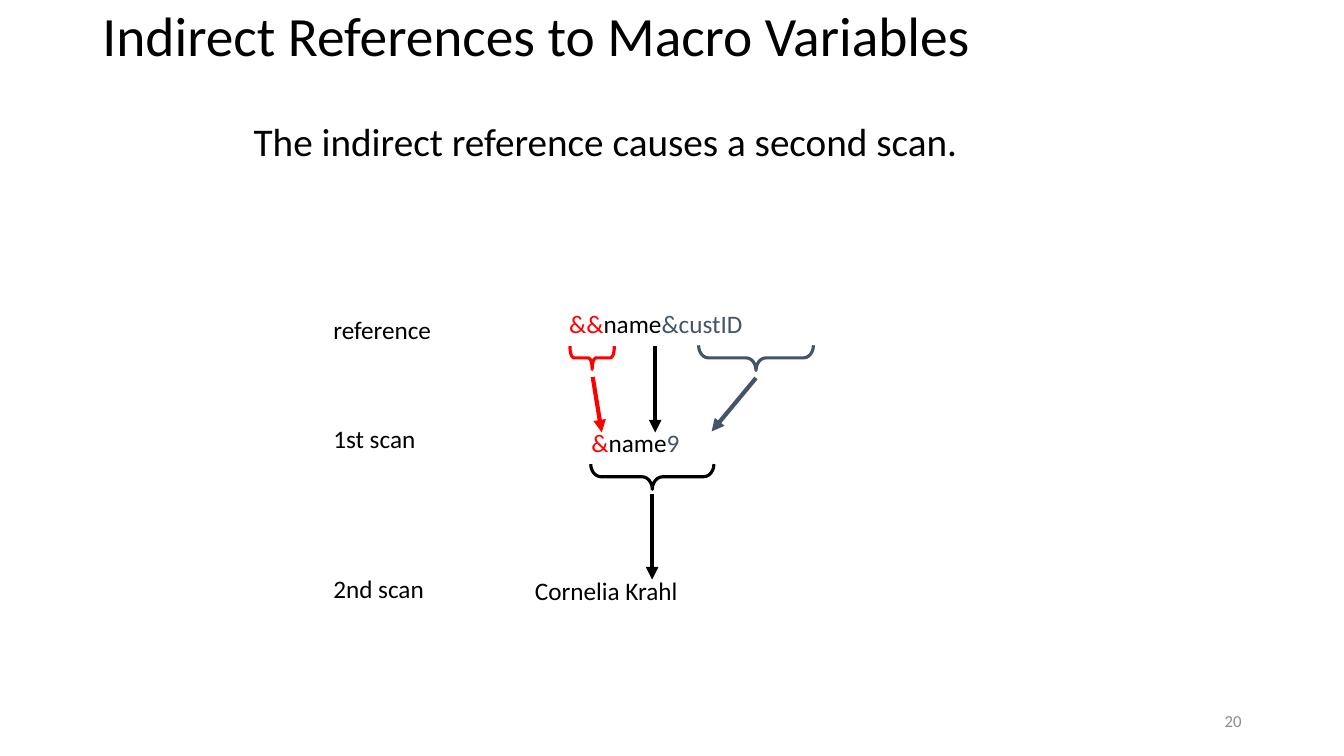
from dataclasses import dataclass

from lxml.etree import SubElement
from pptx import Presentation
from pptx.dml.color import RGBColor
from pptx.enum.shapes import MSO_CONNECTOR as Connector, MSO_SHAPE as Shape
from pptx.enum.text import MSO_ANCHOR as Anchor, MSO_AUTO_SIZE as AutoSize, PP_ALIGN as Align
from pptx.oxml.ns import qn
from pptx.util import Pt


@dataclass(frozen=True)
class Theme:
    font: str = "Calibri"
    ink: str = "000000"
    escape: str = "FF0000"
    index: str = "44546A"
    muted: str = "8C8C8C"
    title: float = 39.6
    body: float = 28
    label: float = 18
    footer: float = 12
    brace_line: float = 2.25
    arrow_line: float = 3


THEME = Theme()


def write(frame, text, size=THEME.label, color=THEME.ink, align=Align.LEFT, anchor=Anchor.TOP,
          wrap=True, fit=AutoSize.NONE, inset=None, spacing=None):
    frame.word_wrap = wrap
    frame.auto_size = fit
    frame.vertical_anchor = anchor
    if inset is not None:
        frame.margin_left = frame.margin_right = Pt(inset)
        frame.margin_top = frame.margin_bottom = Pt(inset)
    paragraph = frame.paragraphs[0]
    paragraph.alignment = align
    paragraph.space_before = Pt(0)
    paragraph.line_spacing = spacing
    parts = [(text, color)] if isinstance(text, str) else text
    for words, part_color in parts:
        run = paragraph.add_run()
        run.text = words
        run.font.name = THEME.font
        run.font.size = Pt(size)
        run.font.color.rgb = RGBColor.from_string(part_color)
    return paragraph


def place(placeholder, left, top, width, height):
    placeholder.left, placeholder.top = Pt(left), Pt(top)
    placeholder.width, placeholder.height = Pt(width), Pt(height)
    return placeholder.text_frame


def add_text(slide, box, text, **style):
    write(slide.shapes.add_textbox(*map(Pt, box)).text_frame, text, **style)


def add_label(slide, box, text, **style):
    add_text(slide, box, text, fit=AutoSize.SHAPE_TO_FIT_TEXT, **style)


def stroke(line, color, width):
    line.color.rgb = RGBColor.from_string(color)
    line.width = Pt(width)


def add_brace(slide, center, middle, span, depth, curve, color):
    brace = slide.shapes.add_shape(Shape.LEFT_BRACE, Pt(center - depth / 2), Pt(middle - span / 2),
                                   Pt(depth), Pt(span))
    brace.rotation = 270
    brace.adjustments[0] = curve
    brace.shadow.inherit = False
    brace.fill.background()
    stroke(brace.line, color, THEME.brace_line)


def add_arrow(slide, start, end, color):
    arrow = slide.shapes.add_connector(Connector.STRAIGHT, *map(Pt, start + end))
    stroke(arrow.line, color, THEME.arrow_line)
    properties = arrow.element.spPr
    SubElement(properties.find(qn("a:ln")), qn("a:tailEnd"), type="triangle")
    SubElement(properties, qn("a:effectLst"))


def add_headings(slide):
    title, body = slide.placeholders
    write(place(title, 66, 1.5, 828, 52.5), "Indirect References to Macro Variables",
          size=THEME.title, anchor=Anchor.MIDDLE, spacing=0.9)
    statement = write(place(body, 174, 84, 600, 96), "The indirect reference causes a second scan.",
                      size=THEME.body, spacing=0.9)
    indents = statement._p.get_or_add_pPr()
    indents.set("marL", str(Pt(18)))
    indents.set("indent", str(-Pt(18)))
    SubElement(indents, qn("a:buNone"))


def add_scan_steps(slide):
    add_label(slide, (231, 221, 85, 29), "reference", wrap=False)
    add_label(slide, (231, 299, 124, 29), "1st scan")
    add_label(slide, (231, 402.5, 80, 36), "2nd scan", wrap=False, inset=7.2)
    add_label(slide, (399.5, 216.7, 139.7, 29),
              [("&&", THEME.escape), ("name", THEME.ink), ("&custID", THEME.index)], wrap=False)
    add_label(slide, (422.5, 305.5, 137.5, 21.6),
              [("&", THEME.escape), ("name", THEME.ink), ("9", THEME.index)], inset=0)
    add_label(slide, (375, 407.5, 117.4, 29), "Cornelia Krahl", wrap=False)


def add_resolution(slide):
    for brace in (
        (423, 255.6, 31.7, 16.6, 0.157, THEME.escape),
        (540, 255.6, 82, 18, 0.387, THEME.index),
        (466, 340.5, 88, 18, 0.411, THEME.ink),
    ):
        add_brace(slide, *brace)
    for arrow in (
        ((423.4, 269.3), (429.8, 308.9), THEME.escape),
        ((468, 247), (468, 308.9), THEME.ink),
        ((540, 270), (508.3, 308.2), THEME.index),
        ((465.8, 352.8), (465.8, 414), THEME.ink),
    ):
        add_arrow(slide, *arrow)


def main():
    deck = Presentation()
    deck.slide_width, deck.slide_height = Pt(960), Pt(540)
    slide = deck.slides.add_slide(deck.slide_layouts.get_by_name("Title and Content"))
    add_headings(slide)
    add_text(slide, (678, 500.5, 216, 28.8), "20", size=THEME.footer, color=THEME.muted,
             align=Align.RIGHT, anchor=Anchor.MIDDLE)
    add_scan_steps(slide)
    add_resolution(slide)
    deck.save("out.pptx")


if __name__ == "__main__":
    main()
